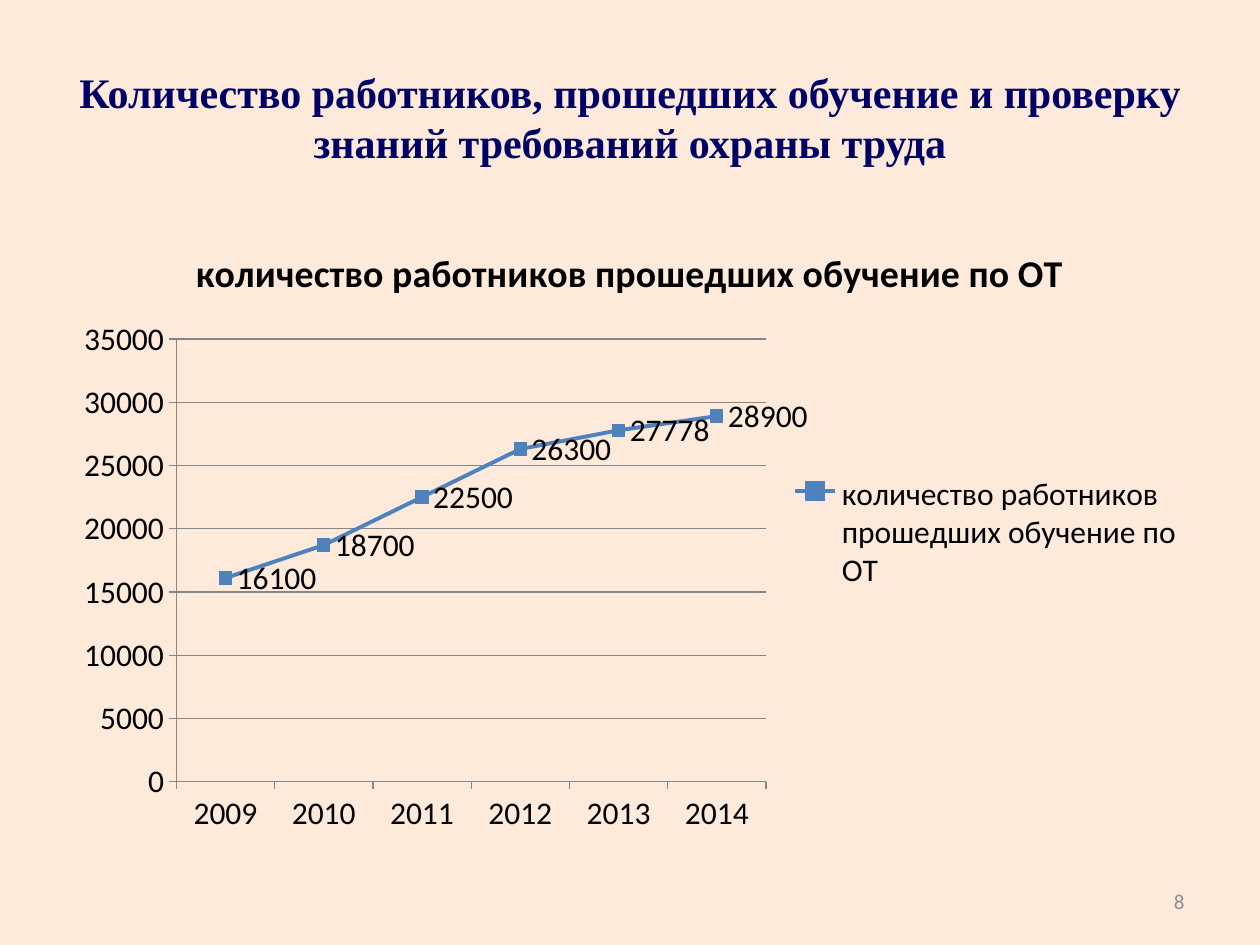
from lxml import etree
from pptx import Presentation
from pptx.chart.data import CategoryChartData
from pptx.dml.color import RGBColor
from pptx.enum.chart import XL_CHART_TYPE, XL_LABEL_POSITION, XL_LEGEND_POSITION, XL_MARKER_STYLE, XL_TICK_MARK
from pptx.enum.text import MSO_ANCHOR, PP_ALIGN
from pptx.oxml.ns import qn
from pptx.util import Inches, Pt

CREAM = RGBColor(0xFD, 0xEA, 0xDA)
NAVY = RGBColor(0x00, 0x00, 0x66)
BLACK = RGBColor(0x00, 0x00, 0x00)
GRAY = RGBColor(0x8C, 0x8C, 0x8C)
LINE = RGBColor(0x86, 0x86, 0x86)
BLUE = RGBColor(0x4F, 0x81, 0xBD)
NAME = "количество работников прошедших обучение по ОТ"


def style(font, face, size, color, bold=False):
    font.name = face
    font.size = Pt(size)
    font.color.rgb = color
    font.bold = bold


def add_text(slide, place, text, align, *look):
    box = slide.shapes.add_textbox(*[Inches(n) for n in place])
    frame = box.text_frame
    frame.word_wrap = True
    frame.vertical_anchor = MSO_ANCHOR.MIDDLE
    para = frame.paragraphs[0]
    para.alignment = align
    run = para.add_run()
    run.text = text
    style(run.font, *look)


prs = Presentation()
prs.slide_width = Inches(10)
prs.slide_height = Inches(7.5)
slide = prs.slides.add_slide(prs.slide_layouts[6])
slide.background.fill.solid()
slide.background.fill.fore_color.rgb = CREAM

add_text(slide, (0.5, 0.3, 9, 1.25),
         "Количество работников, прошедших обучение и проверку знаний требований охраны труда",
         PP_ALIGN.CENTER, "Times New Roman", 24, NAVY, True)

data = CategoryChartData()
data.categories = [str(year) for year in range(2009, 2015)]
data.add_series(NAME, (16100, 18700, 22500, 26300, 27778, 28900))
chart = slide.shapes.add_chart(
    XL_CHART_TYPE.LINE_MARKERS, Inches(0.5), Inches(1.75), Inches(9), Inches(4.95), data).chart
style(chart.font, "Calibri", 18, BLACK)

chart.has_title = True
run = chart.chart_title.text_frame.paragraphs[0].add_run()
run.text = NAME
style(run.font, "Calibri", 21.6, BLACK, True)
chart.chart_title.include_in_layout = False

chart.has_legend = True
chart.legend.position = XL_LEGEND_POSITION.RIGHT
chart.legend.include_in_layout = False

value = chart.value_axis
value.minimum_scale = 0
value.maximum_scale = 35000
value.major_unit = 5000
value.has_major_gridlines = True
value.major_gridlines.format.line.color.rgb = LINE
for axis in (chart.category_axis, value):
    axis.major_tick_mark = XL_TICK_MARK.OUTSIDE
    axis.minor_tick_mark = XL_TICK_MARK.NONE
    axis.format.line.color.rgb = LINE

plot = chart.plots[0]
plot.vary_by_categories = False
series = plot.series[0]
series.smooth = False
series.format.line.color.rgb = BLUE
series.format.line.width = Pt(2.25)
mark = series.marker
mark.style = XL_MARKER_STYLE.SQUARE
mark.size = 7
mark.format.fill.solid()
mark.format.fill.fore_color.rgb = BLUE
mark.format.line.color.rgb = BLUE
labels = series.data_labels
labels.show_value = True
labels.position = XL_LABEL_POSITION.RIGHT
style(labels.font, "Calibri", 18, BLACK)

area = chart.element.find(".//" + qn("c:plotArea"))
layout = area.find(qn("c:layout"))
if layout is None:
    layout = etree.Element(qn("c:layout"))
    area.insert(0, layout)
manual = etree.SubElement(layout, qn("c:manualLayout"))
for tag, val in (("layoutTarget", "inner"), ("xMode", "edge"), ("yMode", "edge"),
                 ("x", "0.1"), ("y", "0.19"), ("w", "0.52"), ("h", "0.71")):
    etree.SubElement(manual, qn("c:" + tag)).set("val", val)

add_text(slide, (7.17, 6.95, 2.33, 0.4), "8", PP_ALIGN.RIGHT, "Calibri", 12, GRAY)

prs.save("out.pptx")
